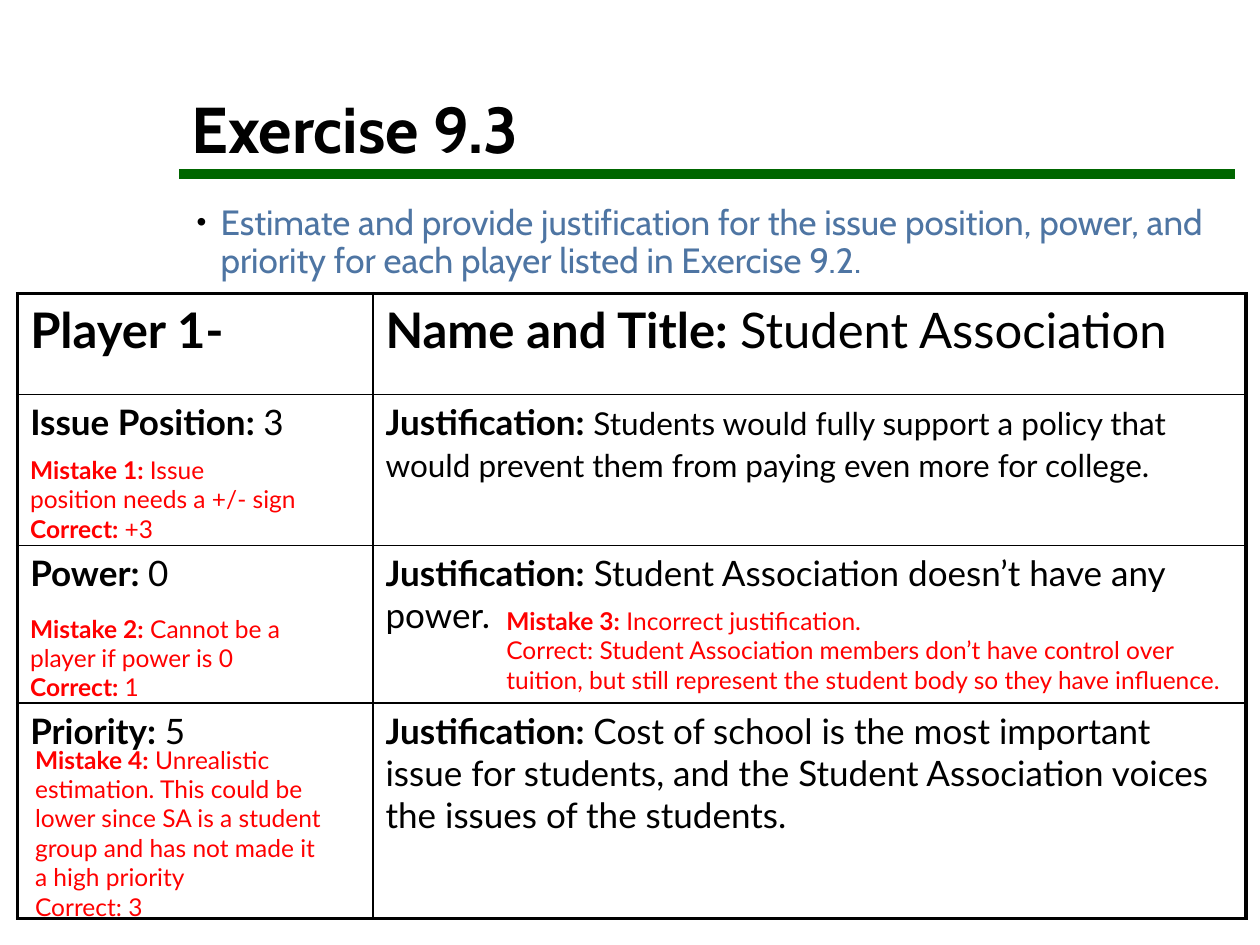
from lxml import etree
from pptx import Presentation
from pptx import util as u
from pptx.dml.color import RGBColor
from pptx.enum import shapes, text
from pptx.oxml import parse_xml
from pptx.oxml.ns import nsdecls, qn

BLACK = RGBColor(0x00, 0x00, 0x00)
GREEN = RGBColor(0x00, 0x66, 0x00)
BLUE = RGBColor(0x4E, 0x75, 0xA3)
RED = RGBColor(0xFF, 0x00, 0x00)

COLS = [2.82, 6.93]
ROWS = [0.8, 1.2, 1.25, 1.71]
THICK, THIN = 2.25, 1

# Each paragraph is (bold label, plain text)
CELLS = [
    [("Player 1-", ""), ("Name and Title:", " Student Association")],
    [("Issue Position: ", "3"),
     ("Justification: ", "Students would fully support a policy that would "
                         "prevent them from paying even more for college.")],
    [("Power: ", "0"),
     ("Justification:", " Student Association doesn’t have any power.")],
    [("Priority: ", "5"),
     ("Justification: ", "Cost of school is the most important issue for "
                         "students, and the Student Association voices the "
                         "issues of the students.")],
]

# Position and paragraphs of each correction
MISTAKES = [
    ((0.14, 3.56, 2.31, 1.08),
     [("Mistake 1: ", "Issue position needs a +/- sign"),
      ("Correct: ", "+3")]),
    ((0.14, 4.82, 2.71, 1.08),
     [("Mistake 2:", " Cannot be a player if power is 0"),
      ("Correct: ", "1")]),
    ((3.92, 4.76, 6.02, 1.08),
     [("Mistake 3:", " Incorrect justification."),
      ("", "Correct: Student Association members don’t have control over "
           "tuition, but still represent the student body so they have "
           "influence.")]),
    ((0.18, 5.86, 2.48, 1.78),
     [("Mistake 4:", " Unrealistic estimation. This could be lower since SA "
                     "is a student group and has not made it a high priority"),
      ("", "Correct: 3")]),
]


def add_run(p, content, size=20, font="Lato", color=BLACK, bold=False):
    if not content:
        return
    r = p.add_run()
    r.text = content
    r.font.size = u.Pt(size)
    r.font.name = font
    r.font.color.rgb = color
    r.font.bold = bold


def place(sp, left, top, width, height):
    sp.left, sp.top = u.Inches(left), u.Inches(top)
    sp.width, sp.height = u.Inches(width), u.Inches(height)


def add_title(s):
    sp = s.shapes.title
    place(sp, 1.42, 0.25, 8.39, 1.13)
    tf = sp.text_frame
    tf.vertical_anchor = text.MSO_ANCHOR.BOTTOM
    p = tf.paragraphs[0]
    p.alignment = text.PP_ALIGN.LEFT
    p.line_spacing = 0.9
    add_run(p, "Exercise 9.3", size=37, font="Cabin", bold=True)


def add_rule(s):
    line = s.shapes.add_connector(
        shapes.MSO_CONNECTOR.STRAIGHT,
        u.Inches(1.42), u.Inches(1.38), u.Inches(9.8), u.Inches(1.38))
    line.line.color.rgb = GREEN
    line.line.width = u.Pt(6)
    etree.SubElement(line._element.spPr, qn("a:effectLst"))


def add_body(s):
    sp = s.placeholders[1]
    place(sp, 1.42, 1.58, 8.39, 4.72)
    p = sp.text_frame.paragraphs[0]
    p.line_spacing = 0.9
    p.space_before = u.Pt(0)
    pPr = p._p.get_or_add_pPr()
    pPr.set("marL", str(u.Inches(0.23)))
    pPr.set("indent", str(u.Inches(-0.19)))
    for xml in (f'<a:buClr {nsdecls("a")}><a:srgbClr val="{BLACK}"/></a:buClr>',
                f'<a:buSzPct {nsdecls("a")} val="80000"/>',
                f'<a:buFont {nsdecls("a")} typeface="Arial"/>',
                f'<a:buChar {nsdecls("a")} char="•"/>'):
        pPr.append(parse_xml(xml))
    add_run(p, "Estimate and provide justification for the issue position, "
               "power, and priority for each player listed in Exercise 9.2.",
            font="Cabin", color=BLUE)


def set_borders(cell, **widths):
    tcPr = cell._tc.get_or_add_tcPr()
    for i, side in enumerate("LRTB"):
        tcPr.insert(i, parse_xml(
            f'<a:ln{side} {nsdecls("a")} w="{u.Pt(widths[side])}">'
            f'<a:solidFill><a:srgbClr val="{BLACK}"/></a:solidFill>'
            f'</a:ln{side}>'))


def add_player_table(s):
    n_rows, n_cols = len(ROWS), len(COLS)
    frame = s.shapes.add_table(n_rows, n_cols, u.Inches(0.14), u.Inches(2.33),
                               u.Inches(sum(COLS)), u.Inches(sum(ROWS)))
    table = frame.table
    table.first_row = table.horz_banding = False
    for column, width in zip(table.columns, COLS):
        column.width = u.Inches(width)
    for i, height in enumerate(ROWS):
        table.rows[i].height = u.Inches(height)
        for j, (label, plain) in enumerate(CELLS[i]):
            cell = table.cell(i, j)
            cell.fill.background()
            # Thick outer frame, thin inner lines
            set_borders(cell,
                        L=THICK if j == 0 else THIN,
                        R=THICK if j == n_cols - 1 else THIN,
                        T=THICK if i == 0 else THIN,
                        B=THICK if i == n_rows - 1 else THIN)
            p = cell.text_frame.paragraphs[0]
            size = 28 if i == 0 else 20
            smaller = (i, j) == (1, 1)
            add_run(p, label, size=size, bold=True)
            add_run(p, plain, size=18 if smaller else size)
            if smaller:
                add_run(p, " ", size=size)  # keeps the 20 pt line height


def add_mistake(s, box, paragraphs):
    sp = s.shapes.add_textbox(*map(u.Inches, box))
    tf = sp.text_frame
    tf.word_wrap = True
    tf.auto_size = text.MSO_AUTO_SIZE.SHAPE_TO_FIT_TEXT
    for i, (label, plain) in enumerate(paragraphs):
        p = tf.add_paragraph() if i else tf.paragraphs[0]
        add_run(p, label, size=14, color=RED, bold=True)
        add_run(p, plain, size=14, color=RED)


def main():
    prs = Presentation()
    prs.slide_width, prs.slide_height = u.Inches(10), u.Inches(7.5)
    s = prs.slides.add_slide(prs.slide_layouts[1])

    # Heading and task
    add_title(s)
    add_rule(s)
    add_body(s)

    # Answers with corrections on top
    add_player_table(s)
    for box, paragraphs in MISTAKES:
        add_mistake(s, box, paragraphs)

    prs.save("out.pptx")


if __name__ == "__main__":
    main()
